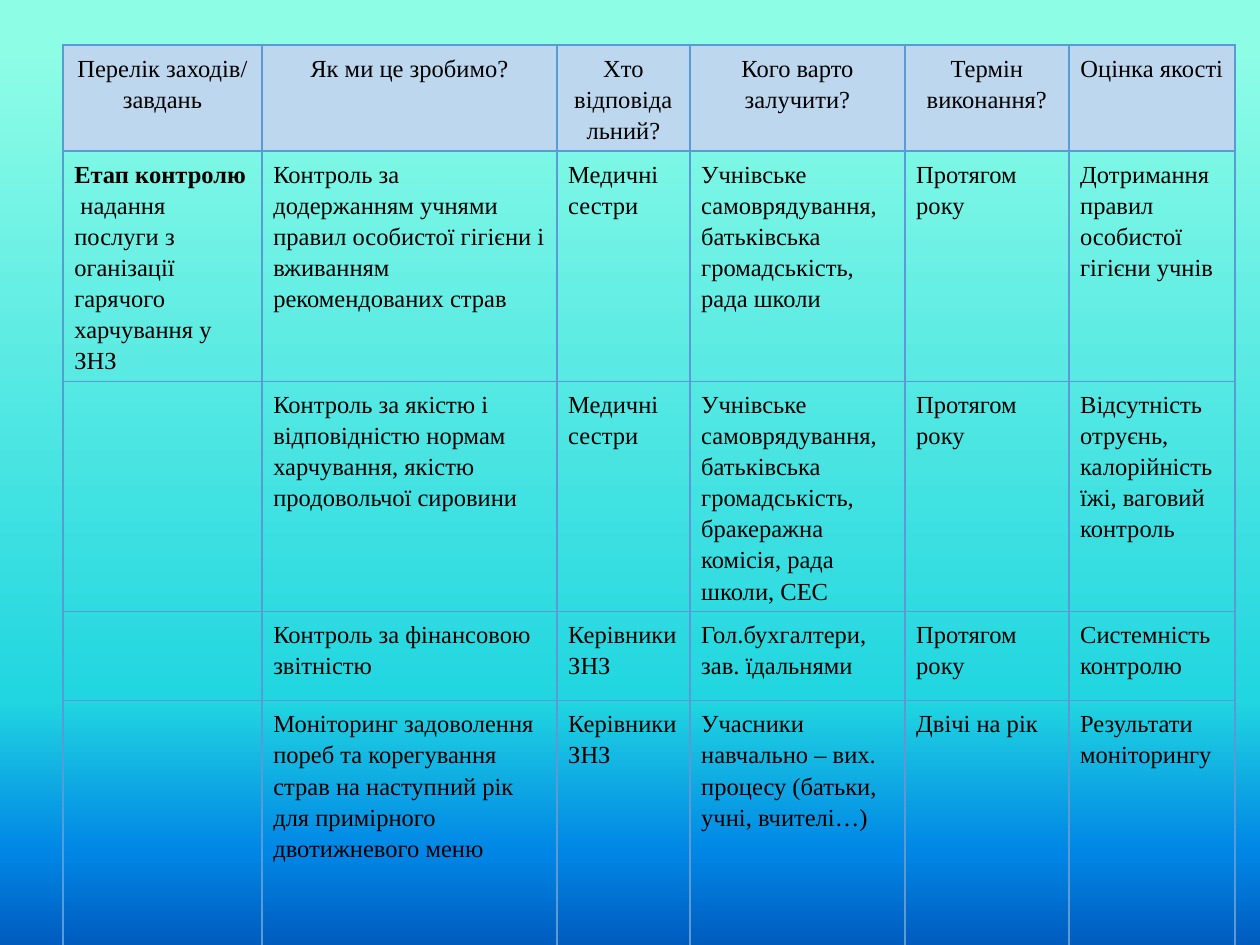
from dataclasses import dataclass

import pptx
import pptx.dml.color
import pptx.enum.text
import pptx.oxml
import pptx.oxml.ns
import pptx.util
from lxml import etree

PX = 914400 // 126
FONT = "Times New Roman"
BORDER = "5B9BD5"
HEADER_FILL = "BDD7EE"


@dataclass
class Stop:
    percent: int
    color: str


@dataclass
class Task:
    stage: str
    action: str
    responsible: str
    involved: str
    term: str
    quality: str
    stage_lead: str = ""

    def texts(self) -> list[str]:
        return [self.stage, self.action, self.responsible,
                self.involved, self.term, self.quality]


BACKGROUND = [Stop(5, "8EFDE6"), Stop(74, "21D6E0"), Stop(90, "0087E6"), Stop(100, "005CBF")]
COLUMN_WIDTHS = [199, 295, 133, 215, 164, 166]
ROW_HEIGHTS = [105, 230, 230, 89, 398]
ROWS = [
    Task("Перелік заходів/ завдань", "Як ми це зробимо?", "Хто відповідальний?",
         "Кого варто залучити?", "Термін виконання?", "Оцінка якості"),
    # A no-break space indents the line after the bold lead
    Task("  надання послуги з оганізації гарячого харчування у ЗНЗ",
         "Контроль за додержанням учнями правил особистої гігієни і вживанням рекомендованих страв",
         "Медичні сестри",
         "Учнівське самоврядування, батьківська громадськість, рада школи",
         "Протягом року", "Дотримання правил особистої гігієни учнів",
         stage_lead="Етап контролю"),
    Task("", "Контроль за якістю і відповідністю нормам харчування, якістю продовольчої сировини",
         "Медичні сестри",
         "Учнівське самоврядування, батьківська громадськість, бракеражна комісія, рада школи, СЕС",
         "Протягом року", "Відсутність отруєнь, калорійність їжі, ваговий контроль"),
    Task("", "Контроль за фінансовою звітністю", "Керівники ЗНЗ",
         "Гол.бухгалтери, зав. їдальнями", "Протягом року", "Системність контролю"),
    Task("", "Моніторинг задоволення пореб та корегування страв на наступний рік "
         "для примірного двотижневого меню",
         "Керівники ЗНЗ", "Учасники навчально – вих. процесу (батьки, учні, вчителі…)",
         "Двічі на рік", "Результати моніторингу"),
]


def px(length: int) -> int:
    return length * PX


def rgb(color: str) -> pptx.dml.color.RGBColor:
    return pptx.dml.color.RGBColor.from_string(color)


def paint_background(slide, stops: list[Stop]) -> None:
    fill = slide.background.fill
    fill.gradient()
    fill.gradient_angle = 270
    qn = pptx.oxml.ns.qn
    stop_list = slide.element.find(".//" + qn("a:gsLst"))
    for old_stop in list(stop_list):
        stop_list.remove(old_stop)
    for stop in stops:
        element = etree.SubElement(stop_list, qn("a:gs"), pos=str(stop.percent * 1000))
        etree.SubElement(element, qn("a:srgbClr"), val=stop.color)


def add_borders(cell) -> None:
    properties = cell._tc.get_or_add_tcPr()
    for index, side in enumerate(("lnL", "lnR", "lnT", "lnB")):
        line = pptx.oxml.parse_xml(
            f'<a:{side} {pptx.oxml.ns.nsdecls("a")} w="12700"><a:solidFill>'
            f'<a:srgbClr val="{BORDER}"/></a:solidFill></a:{side}>')
        properties.insert(index, line)


def format_cell(cell, text: str, lead: str, is_header: bool) -> None:
    cell.margin_left = cell.margin_right = pptx.util.Inches(0.09)
    cell.margin_top = cell.margin_bottom = pptx.util.Inches(0.05)
    if is_header:
        cell.fill.solid()
        cell.fill.fore_color.rgb = rgb(HEADER_FILL)
    else:
        cell.fill.background()
    add_borders(cell)

    paragraph = cell.text_frame.paragraphs[0]
    if is_header:
        paragraph.alignment = pptx.enum.text.PP_ALIGN.CENTER
    paragraph.line_spacing = 1.15
    paragraph.space_after = pptx.util.Pt(10)
    paragraph.font.name = FONT
    paragraph.font.size = pptx.util.Pt(14)
    paragraph.font.bold = False
    paragraph.font.color.rgb = rgb("000000")
    if lead:
        run = paragraph.add_run()
        run.text = lead
        run.font.bold = True
    if text:
        paragraph.add_run().text = text


def add_plan_table(slide, left: int, top: int) -> None:
    shape = slide.shapes.add_table(
        len(ROWS), len(COLUMN_WIDTHS), px(left), px(top),
        px(sum(COLUMN_WIDTHS)), px(sum(ROW_HEIGHTS)))
    table = shape.table
    table.horz_banding = False
    table.first_row = False
    for column, width in zip(table.columns, COLUMN_WIDTHS):
        column.width = px(width)
    for row_index, (row, height, task) in enumerate(zip(table.rows, ROW_HEIGHTS, ROWS)):
        row.height = px(height)
        for column_index, (cell, text) in enumerate(zip(row.cells, task.texts())):
            lead = task.stage_lead if column_index == 0 else ""
            format_cell(cell, text, lead, is_header=row_index == 0)


def main() -> None:
    presentation = pptx.Presentation()
    presentation.slide_width = px(1260)
    presentation.slide_height = px(945)
    # Blank layout: the slide has no title
    slide = presentation.slides.add_slide(presentation.slide_layouts[6])
    paint_background(slide, BACKGROUND)
    add_plan_table(slide, left=63, top=45)
    presentation.save("out.pptx")


if __name__ == "__main__":
    main()
